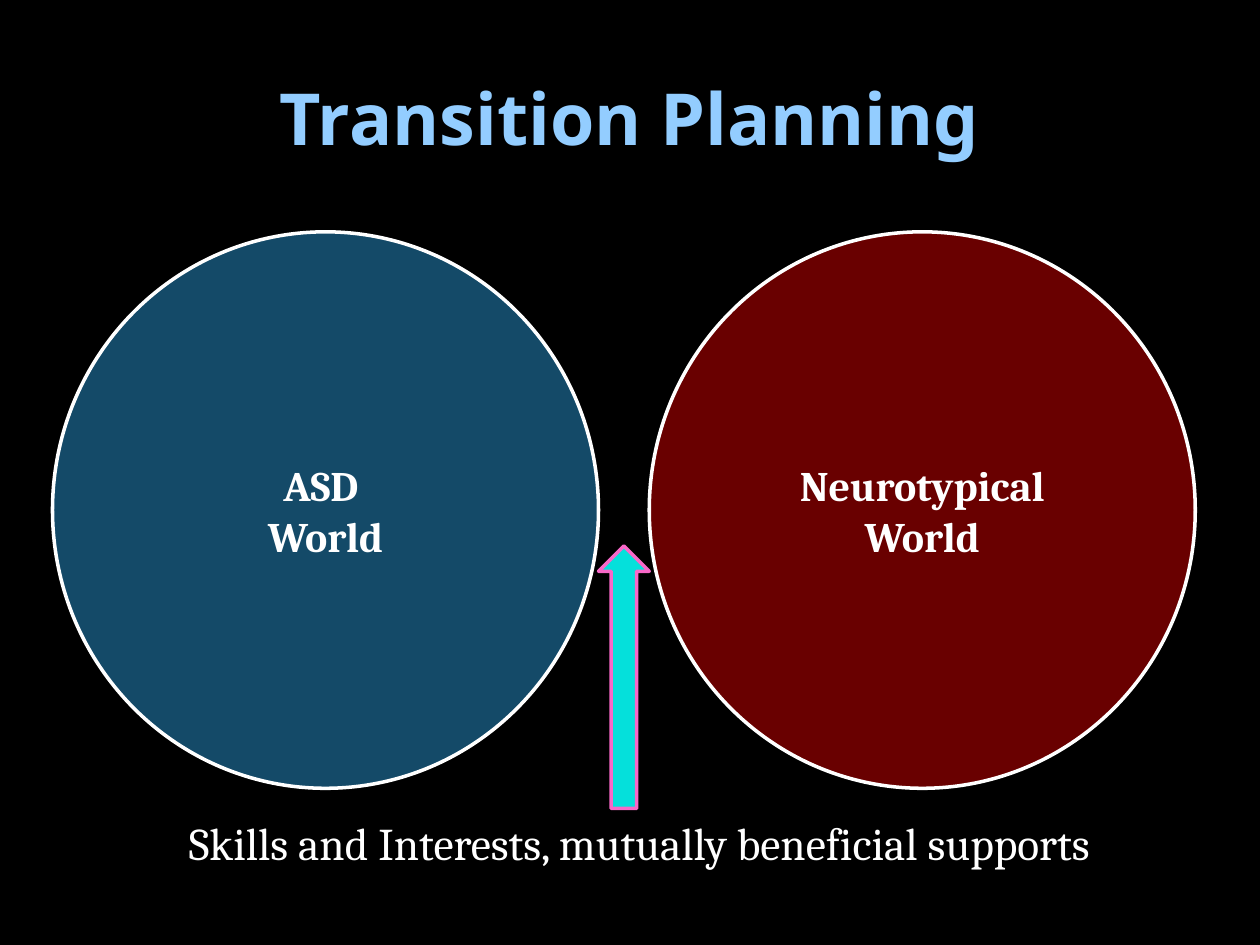
from dataclasses import dataclass

from lxml.etree import SubElement
from pptx import Presentation
from pptx.dml.color import RGBColor
from pptx.enum.shapes import MSO_SHAPE
from pptx.enum.text import MSO_ANCHOR, PP_ALIGN
from pptx.oxml.ns import qn
from pptx.util import Pt


@dataclass(frozen=True)
class Theme:
    """Colours, fonts and type sizes of the slide."""
    back: str = "000000"
    title: str = "93CDFF"
    text: str = "FFFFFF"
    asd: str = "31B6FD"
    neuro: str = "FF0000"
    arrow: str = "05E0DB"
    edge: str = "F868C8"
    head: str = "Noto Sans"
    body: str = "Cambria"
    big: float = 41
    mid: float = 25.9
    small: float = 24
    alpha: int = 41
    line: float = 2


class Deck:
    """Draws styled elements on the current slide."""

    def __init__(self, theme):
        """Open a blank slide with the theme's background."""
        self.theme = theme
        self.prs = Presentation()
        self.prs.slide_width, self.prs.slide_height = Pt(720), Pt(540)
        self.slide = self.prs.slides.add_slide(self.prs.slide_layouts[6])
        fill = self.slide.background.fill
        fill.solid()
        fill.fore_color.rgb = RGBColor.from_string(theme.back)

    def letter(self, frame, text, font, size, color, bold, anchor):
        """Put centred, styled text in a frame."""
        frame.word_wrap = True
        frame.vertical_anchor = anchor
        frame.text = text
        for para in frame.paragraphs:
            para.alignment = PP_ALIGN.CENTER
            for run in para.runs:
                run.font.name, run.font.size = font, Pt(size)
                run.font.bold = bold
                run.font.color.rgb = RGBColor.from_string(color)

    def label(self, box, text, font, size, color, bold=False,
              anchor=MSO_ANCHOR.TOP, left=7.2):
        """Add a text box."""
        frame = self.slide.shapes.add_textbox(*map(Pt, box)).text_frame
        self.letter(frame, text, font, size, color, bold, anchor)
        frame.margin_left = Pt(left)

    def shape(self, kind, box, color, edge):
        """Add a filled and outlined shape without shadow."""
        form = self.slide.shapes.add_shape(kind, *map(Pt, box))
        form.shadow.inherit = False
        form.fill.solid()
        form.fill.fore_color.rgb = RGBColor.from_string(color)
        form.line.color.rgb = RGBColor.from_string(edge)
        form.line.width = Pt(self.theme.line)
        return form

    def world(self, box, color, text):
        """Add a translucent circle with a bold label."""
        look = self.theme
        form = self.shape(MSO_SHAPE.OVAL, box, color, look.text)
        tint = form.element.spPr.find(qn("a:solidFill"))[0]
        SubElement(tint, qn("a:alpha"), val=str(look.alpha * 1000))
        self.letter(form.text_frame, text, look.body, look.small,
                    look.text, True, MSO_ANCHOR.MIDDLE)


def main():
    """Build and save the slide."""
    look = Theme()
    deck = Deck(look)
    left, top, wide, high, gap = 30, 132.5, 312, 318, 29
    deck.label((36, 21.6, 648, 90), "Transition Planning", look.head,
               look.big, look.title, True, MSO_ANCHOR.MIDDLE)
    deck.label((36, 462.2, 648, 34.6),
               "Skills and Interests, mutually beneficial supports",
               look.body, look.mid, look.text, left=18)
    deck.world((left + wide + gap, top, wide, high), look.neuro,
               "Neurotypical World")
    deck.world((left, top, wide, high), look.asd, "ASD \nWorld")
    deck.shape(MSO_SHAPE.UP_ARROW, (left + wide, 312, gap, 150),
               look.arrow, look.edge)
    deck.prs.save("out.pptx")


if __name__ == "__main__":
    main()
